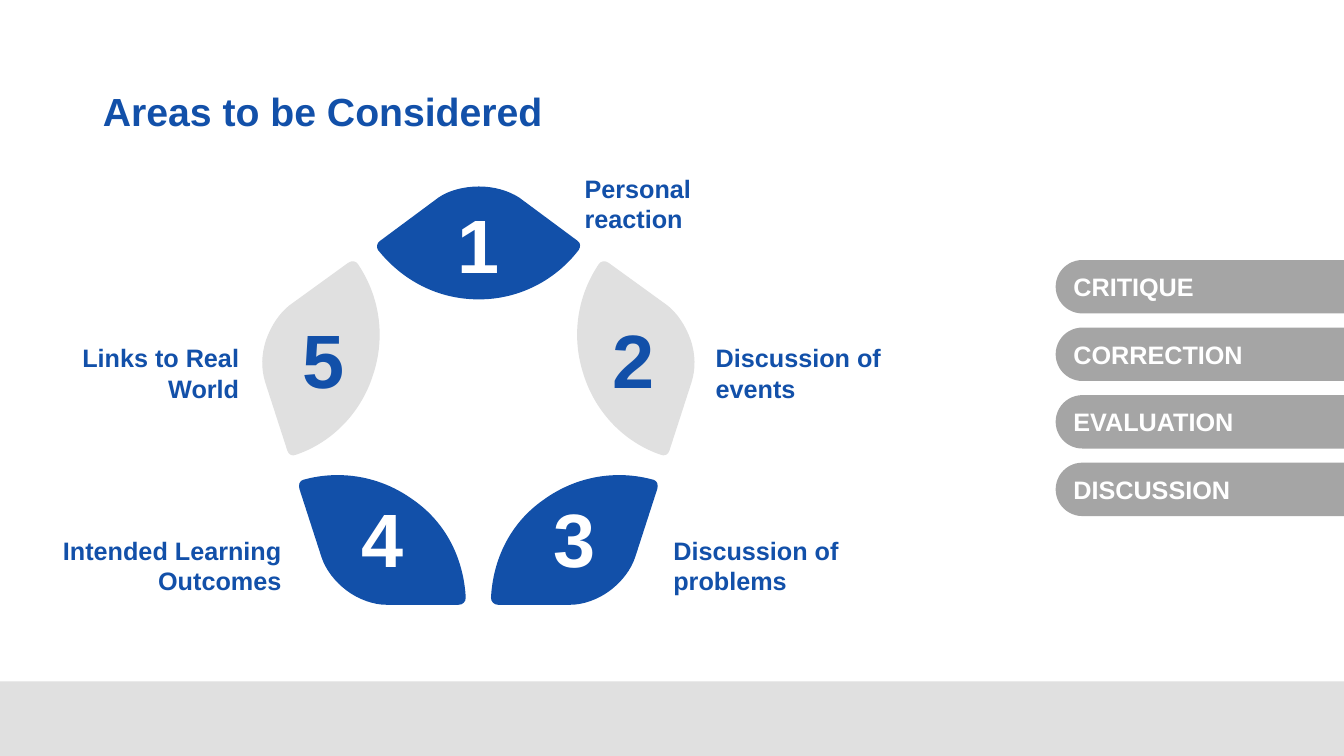
from pptx import Presentation
from pptx.dml.color import RGBColor
from pptx.enum.shapes import MSO_SHAPE
from pptx.enum.text import MSO_ANCHOR, MSO_AUTO_SIZE, PP_ALIGN
from pptx.oxml.ns import qn
from pptx.util import Inches, Pt

RECT, PILL = MSO_SHAPE.RECTANGLE, MSO_SHAPE.ROUNDED_RECTANGLE
LEFT, MID, RIGHT = PP_ALIGN.LEFT, PP_ALIGN.CENTER, PP_ALIGN.RIGHT
TOP, CENTER = MSO_ANCHOR.TOP, MSO_ANCHOR.MIDDLE
GROW, FIXED = MSO_AUTO_SIZE.SHAPE_TO_FIT_TEXT, MSO_AUTO_SIZE.NONE

THEME = {
    "font": "Arial",
    "blue": RGBColor.from_string("1250A9"),
    "pale": RGBColor.from_string("E0E0E0"),
    "gray": RGBColor.from_string("A5A5A5"),
    "white": RGBColor.from_string("FFFFFF"),
    "title": Pt(28),
    "digit": Pt(54),
    "label": Pt(18),
}


def write(shape, text, size="label", color="blue", align=LEFT, anchor=TOP, fit=FIXED):
    frame = shape.text_frame
    frame.word_wrap = True
    frame.auto_size = fit
    frame.vertical_anchor = anchor
    line = frame.paragraphs[0]
    line.alignment = align
    run = line.add_run()
    run.text = text
    font = run.font
    font.name = THEME["font"]
    font.size = THEME[size]
    font.bold = True
    font.color.rgb = THEME[color]


def paint(shape, color):
    shape.shadow.inherit = False
    shape.fill.solid()
    shape.fill.fore_color.rgb = THEME[color]
    shape.line.fill.background()


deck = Presentation()
deck.slide_width, deck.slide_height = Inches(13.33), Inches(7.5)
slide = deck.slides.add_slide(deck.slide_layouts[5])
shapes = slide.shapes

band = shapes.add_shape(RECT, 0, Inches(6.76), Inches(13.33), Inches(0.74))
paint(band, "pale")

title = shapes.title
title.left, title.top = Inches(0.92), Inches(0.4)
title.width, title.height = Inches(11.5), Inches(1.45)
write(title, "Areas to be Considered", size="title", anchor=CENTER)
title.text_frame.paragraphs[0].line_spacing = 0.9

top = [
    (4.75, 1.85),
    (4.6, 1.85), (4.45, 1.89), (4.35, 1.96),
    (3.77, 2.39), (3.77, 2.39), (3.77, 2.39),
    (3.74, 2.41), (3.73, 2.45), (3.75, 2.48),
    (3.99, 2.78), (4.34, 2.97), (4.75, 2.97),
    (5.15, 2.97), (5.51, 2.78), (5.74, 2.48),
    (5.76, 2.45), (5.76, 2.41), (5.73, 2.39),
    (5.15, 1.96), (5.15, 1.96), (5.15, 1.96),
    (5.04, 1.89), (4.9, 1.85), (4.75, 1.85),
]
side = [
    (6.85, 3.37),
    (6.8, 3.23), (6.72, 3.11), (6.62, 3.03),
    (6.04, 2.61), (6.04, 2.61), (6.04, 2.61),
    (6, 2.58), (5.96, 2.59), (5.94, 2.62),
    (5.73, 2.93), (5.66, 3.33), (5.79, 3.72),
    (5.91, 4.1), (6.2, 4.39), (6.55, 4.51),
    (6.59, 4.53), (6.63, 4.51), (6.64, 4.47),
    (6.86, 3.79), (6.86, 3.79), (6.86, 3.79),
    (6.9, 3.66), (6.9, 3.52), (6.85, 3.37),
]
base = [
    (6.05, 5.86),
    (6.17, 5.77), (6.26, 5.65), (6.3, 5.53),
    (6.52, 4.85), (6.52, 4.85), (6.52, 4.85),
    (6.53, 4.81), (6.52, 4.77), (6.48, 4.76),
    (6.12, 4.66), (5.72, 4.72), (5.39, 4.96),
    (5.06, 5.19), (4.89, 5.55), (4.87, 5.93),
    (4.87, 5.97), (4.9, 6), (4.94, 6),
    (5.66, 6), (5.66, 6), (5.66, 6),
    (5.78, 6), (5.93, 5.95), (6.05, 5.86),
]
petals = [
    ("2", side, False, "pale", "blue"),
    ("3", base, False, "blue", "white"),
    ("4", base, True, "blue", "white"),
    ("5", side, True, "pale", "blue"),
    ("1", top, False, "blue", "white"),
]
for digit, points, flip, fill, ink in petals:
    ring = [(Inches(9.49 - x if flip else x), Inches(y)) for x, y in points]
    pen = shapes.build_freeform(*ring[0])
    pen.add_line_segments(ring[1:], close=True)
    leaf = pen.convert_to_shape()
    lines = list(leaf._element.iter(qn("a:lnTo")))
    for first in range(0, len(lines), 3):
        curve, *rest = lines[first:first + 3]
        curve.tag = qn("a:cubicBezTo")
        for line in rest:
            curve.append(line[0])
            line.getparent().remove(line)
    paint(leaf, fill)
    write(leaf, digit, size="digit", color=ink, align=MID, anchor=CENTER)

labels = [
    ("Personal reaction", 5.7, 1.67, 1.67, LEFT),
    ("Discussion of events", 7, 3.35, 1.95, LEFT),
    ("Discussion of problems", 6.58, 5.26, 1.95, LEFT),
    ("Links to Real World", 0.52, 3.35, 1.95, RIGHT),
    ("Intended Learning Outcomes", 0.43, 5.26, 2.46, RIGHT),
]
for text, x, y, width, align in labels:
    box = shapes.add_textbox(Inches(x), Inches(y), Inches(width), Inches(0.71))
    write(box, text, align=align, fit=GROW)

for row, text in enumerate(["CRITIQUE", "CORRECTION", "EVALUATION", "DISCUSSION"]):
    pill = shapes.add_shape(PILL, Inches(10.47), Inches(2.58 + row * 0.67),
                            Inches(3.48), Inches(0.53))
    pill.adjustments[0] = 0.5
    paint(pill, "gray")
    write(pill, text, color="white", anchor=CENTER)

deck.save("out.pptx")
